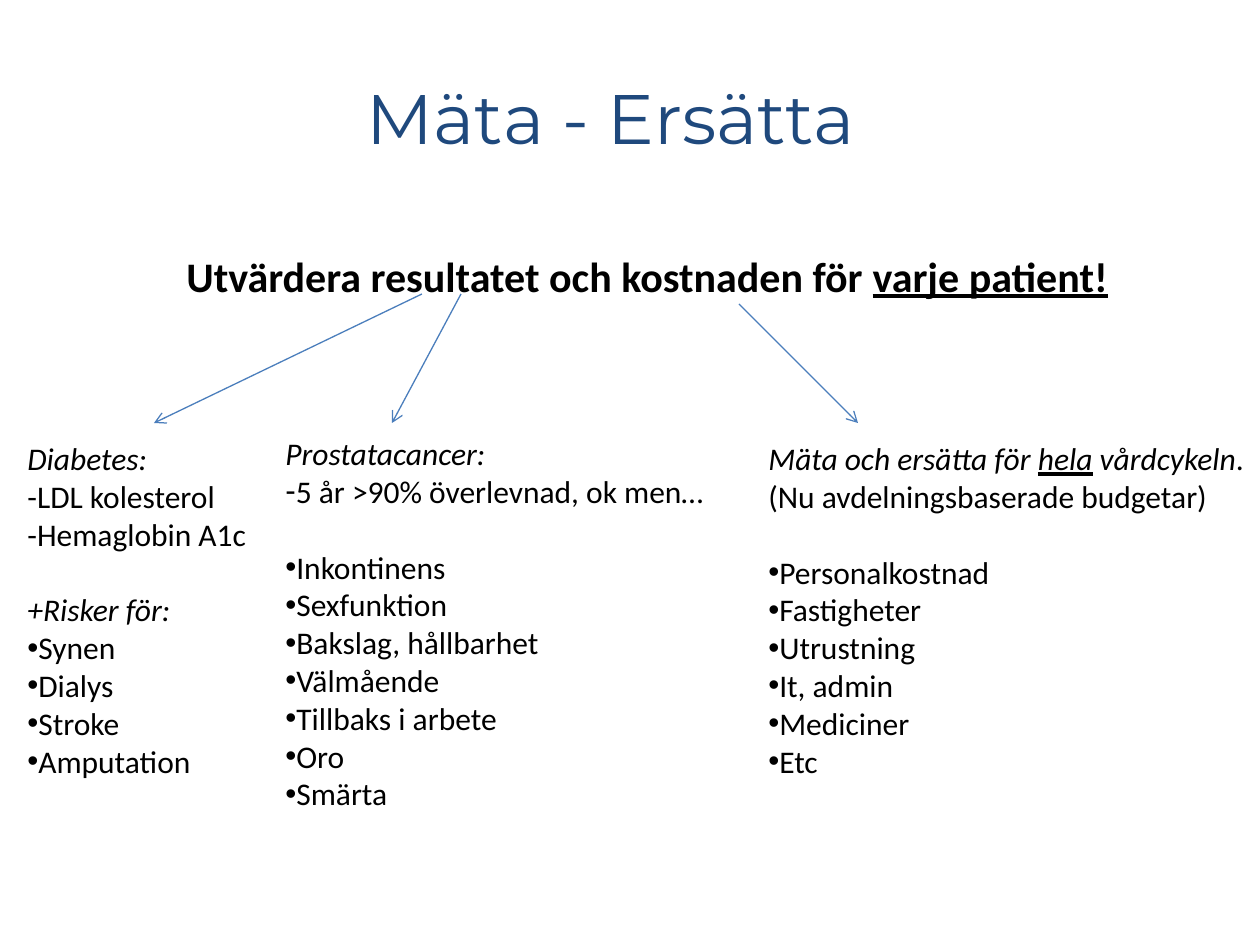
from lxml.etree import SubElement
from pptx import Presentation
from pptx.dml.color import RGBColor
from pptx.enum.shapes import MSO_CONNECTOR
from pptx.enum.text import MSO_ANCHOR, MSO_AUTO_SIZE, PP_ALIGN
from pptx.oxml.ns import qn
from pptx.util import Pt

NAVY = RGBColor(0x1F, 0x49, 0x7D)
BLACK = RGBColor(0, 0, 0)
BLUE = RGBColor(0x4B, 0x7E, 0xBC)

EMU_PER_PX = 914400 / 126
BLANK_LINE = Pt(21.6)

TITLE = [("", [("Mäta - Ersätta", "")])]
CLAIM = [("", [("Utvärdera resultatet och kostnaden för ", "b"), ("varje patient!", "bu")])]

COLUMNS = [
    {
        "box": (15, 433, 247, 357),
        "heads": [
            ("", [("Diabetes:", "i")]),
            ("", [("-LDL kolesterol", "")]),
            ("", [("-Hemaglobin A1c", "")]),
            ("", [("+Risker för:", "i")]),
        ],
        "items": ["Synen", "Dialys", "Stroke", "Amputation"],
        "gap_before": 3,
    },
    {
        "box": (273, 428, 447, 471),
        "heads": [
            ("", [("Prostatacancer:", "i")]),
            ("-", [("5 år >90% överlevnad, ok men…", "")]),
        ],
        "items": ["Inkontinens", "Sexfunktion", "Bakslag, hållbarhet", "Välmående",
                  "Tillbaks i arbete", "Oro", "Smärta"],
        "gap_before": 2,
    },
    {
        "box": (756, 433, 504, 394),
        "heads": [
            ("", [("Mäta och ersätta för ", "i"), ("hela", "iu"), (" vårdcykeln", "i"), (".", "")]),
            ("", [("(Nu avdelningsbaserade budgetar)", "")]),
        ],
        "items": ["Personalkostnad", "Fastigheter", "Utrustning", "It, admin", "Mediciner", "Etc"],
        "gap_before": 2,
    },
]

ARROWS = [(422, 294, 154, 423), (461, 294, 392, 423), (739, 304, 858, 423)]


def px(value):
    """Turn px into EMU."""
    return round(value * EMU_PER_PX)


def add_text(slide, box, paragraphs, size=18, font="Calibri", color=BLACK,
             align=PP_ALIGN.LEFT, anchor=MSO_ANCHOR.TOP, wrap=False, gap_before=None):
    """Add a text box of (bullet, runs) paragraphs."""
    frame = slide.shapes.add_textbox(*map(px, box)).text_frame
    frame.word_wrap = wrap
    frame.auto_size = MSO_AUTO_SIZE.NONE if wrap else MSO_AUTO_SIZE.SHAPE_TO_FIT_TEXT
    frame.vertical_anchor = anchor
    for index, (bullet, runs) in enumerate(paragraphs):
        paragraph = frame.paragraphs[0] if index == 0 else frame.add_paragraph()
        paragraph.alignment = align
        if index == gap_before:
            paragraph.space_before = BLANK_LINE
        if bullet:
            properties = paragraph._p.get_or_add_pPr()
            SubElement(properties, qn("a:buFont"), typeface="Arial")
            SubElement(properties, qn("a:buChar"), char=bullet)
        for text, style in runs:
            run = paragraph.add_run()
            run.text = text
            run.font.name = font
            run.font.size = Pt(size)
            run.font.color.rgb = color
            run.font.bold = "b" in style
            run.font.italic = "i" in style
            run.font.underline = "u" in style


def add_arrow(slide, ends):
    """Add a thin line with an open arrowhead at its end."""
    arrow = slide.shapes.add_connector(MSO_CONNECTOR.STRAIGHT, *map(px, ends))
    arrow.line.color.rgb = BLUE
    arrow.line.width = Pt(0.75)
    SubElement(arrow.line._get_or_add_ln(), qn("a:tailEnd"), type="arrow")
    SubElement(arrow._element.spPr, qn("a:effectLst"))


def main():
    """Build the slide and save it."""
    presentation = Presentation()
    presentation.slide_width, presentation.slide_height = px(1260), px(945)
    slide = presentation.slides.add_slide(presentation.slide_layouts[6])
    add_text(slide, (44, 37, 1134, 158), TITLE, size=40, font="Montserrat", color=NAVY,
             align=PP_ALIGN.CENTER, anchor=MSO_ANCHOR.MIDDLE, wrap=True)
    add_text(slide, (174, 244, 956, 63), CLAIM, size=24)
    for column in COLUMNS:
        bullets = [("•", [(item, "")]) for item in column["items"]]
        add_text(slide, column["box"], column["heads"] + bullets,
                 gap_before=column["gap_before"])
    for ends in ARROWS:
        add_arrow(slide, ends)
    presentation.save("out.pptx")


if __name__ == "__main__":
    main()
